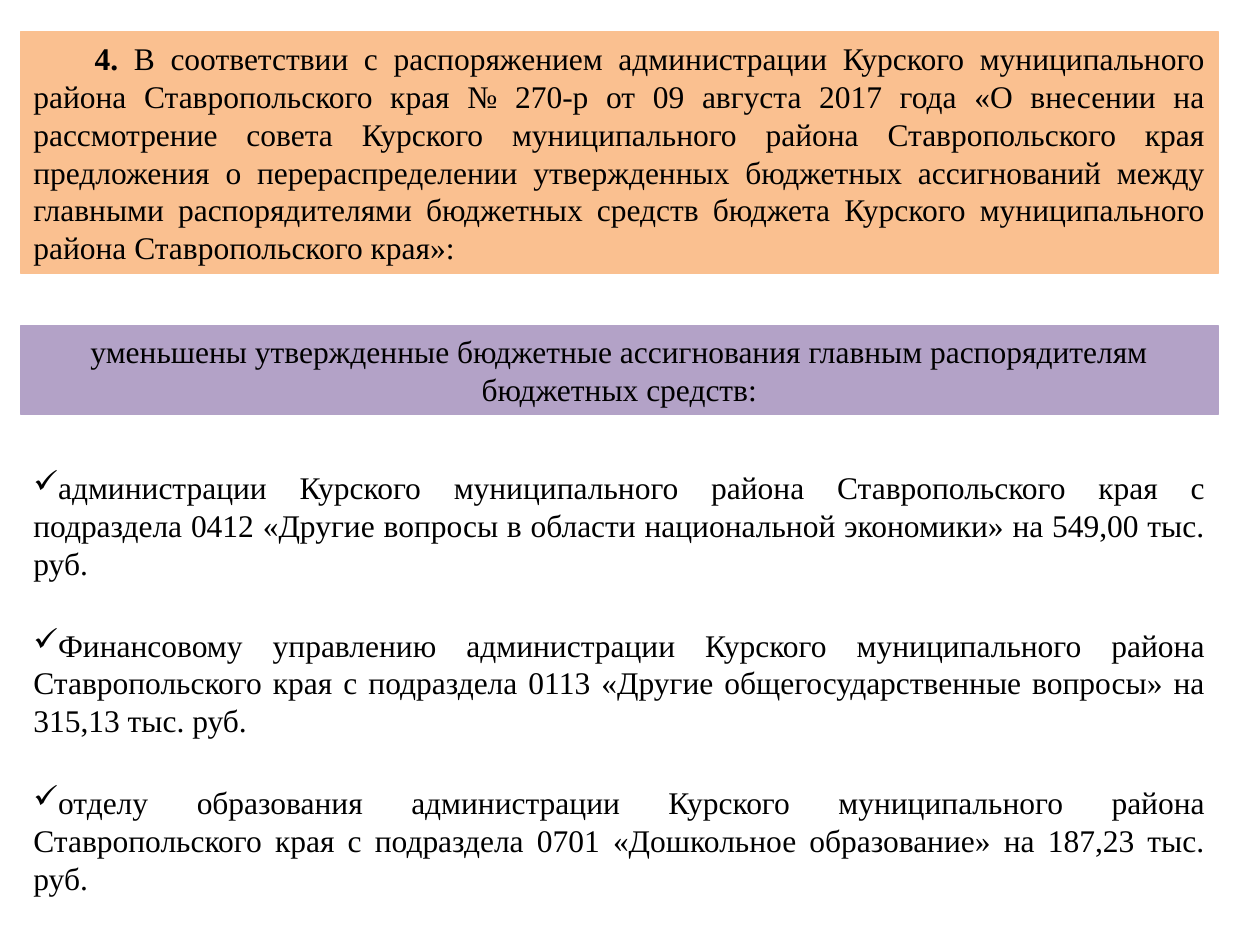
from lxml import etree
from pptx import Presentation
from pptx.dml.color import RGBColor
from pptx.enum import shapes, text
from pptx.oxml import ns
from pptx.util import Pt

ORANGE = RGBColor(0xFA, 0xC0, 0x90)
PURPLE = RGBColor(0xB3, 0xA2, 0xC7)
BLACK = RGBColor(0, 0, 0)
FONT = "Times New Roman"
LEFT, WIDTH = Pt(12), Pt(684)

deck = Presentation()
deck.slide_width, deck.slide_height = Pt(720), Pt(540)
slide = deck.slides.add_slide(deck.slide_layouts[6])


def write(shape, align, runs):
    """Fill a shape with one paragraph of (words, bold) runs."""
    frame = shape.text_frame
    frame.word_wrap = True
    frame.auto_size = text.MSO_AUTO_SIZE.SHAPE_TO_FIT_TEXT
    para = frame.paragraphs[0]
    para.alignment = align
    for words, bold in runs:
        run = para.add_run()
        run.text = words
        run.font.name, run.font.size = FONT, Pt(18)
        run.font.bold = bold
        run.font.color.rgb = BLACK
    return para


def add_band(top, height, color):
    """Add a plain coloured band."""
    band = slide.shapes.add_shape(
        shapes.MSO_SHAPE.RECTANGLE, LEFT, Pt(top), WIDTH, Pt(height))
    band.shadow.inherit = False
    band.fill.solid()
    band.fill.fore_color.rgb = color
    band.line.color.rgb = color
    band.line.width = Pt(0.75)
    return band


# Order of the administration, with an indented first line
order = write(add_band(18, 138.5, ORANGE), text.PP_ALIGN.JUSTIFY, [
    ("4.", True),
    (" В соответствии с распоряжением администрации Курского муниципального "
     "района Ставропольского края № 270-р от 09 августа 2017 года «О внесении "
     "на рассмотрение совета Курского муниципального района Ставропольского "
     "края предложения о перераспределении утвержденных бюджетных "
     "ассигнований между главными распорядителями бюджетных средств бюджета "
     "Курского муниципального района Ставропольского края»:", False),
])
order._p.get_or_add_pPr().set("indent", str(Pt(35)))

# Heading of the reductions
write(add_band(186, 51, PURPLE), text.PP_ALIGN.CENTER, [
    ("уменьшены утвержденные бюджетные ассигнования главным распорядителям "
     "бюджетных средств:", False),
])

# Reductions, one ticked box each
cuts = [
    "администрации Курского муниципального района Ставропольского края с "
    "подраздела 0412 «Другие вопросы в области национальной экономики» на "
    "549,00 тыс. руб.",
    "Финансовому управлению администрации Курского муниципального района "
    "Ставропольского края с подраздела 0113 «Другие общегосударственные "
    "вопросы» на 315,13 тыс. руб.",
    "отделу образования администрации Курского муниципального района "
    "Ставропольского края с подраздела 0701 «Дошкольное образование» на "
    "187,23 тыс. руб.",
]
for row, words in enumerate(cuts):
    box = slide.shapes.add_textbox(LEFT, Pt(264 + 90 * row), WIDTH, Pt(72.7))
    para = write(box, text.PP_ALIGN.JUSTIFY, [(words, False)])
    tick = etree.SubElement(para._p.get_or_add_pPr(), ns.qn("a:buChar"))
    tick.set("char", "✓")

deck.save("out.pptx")
